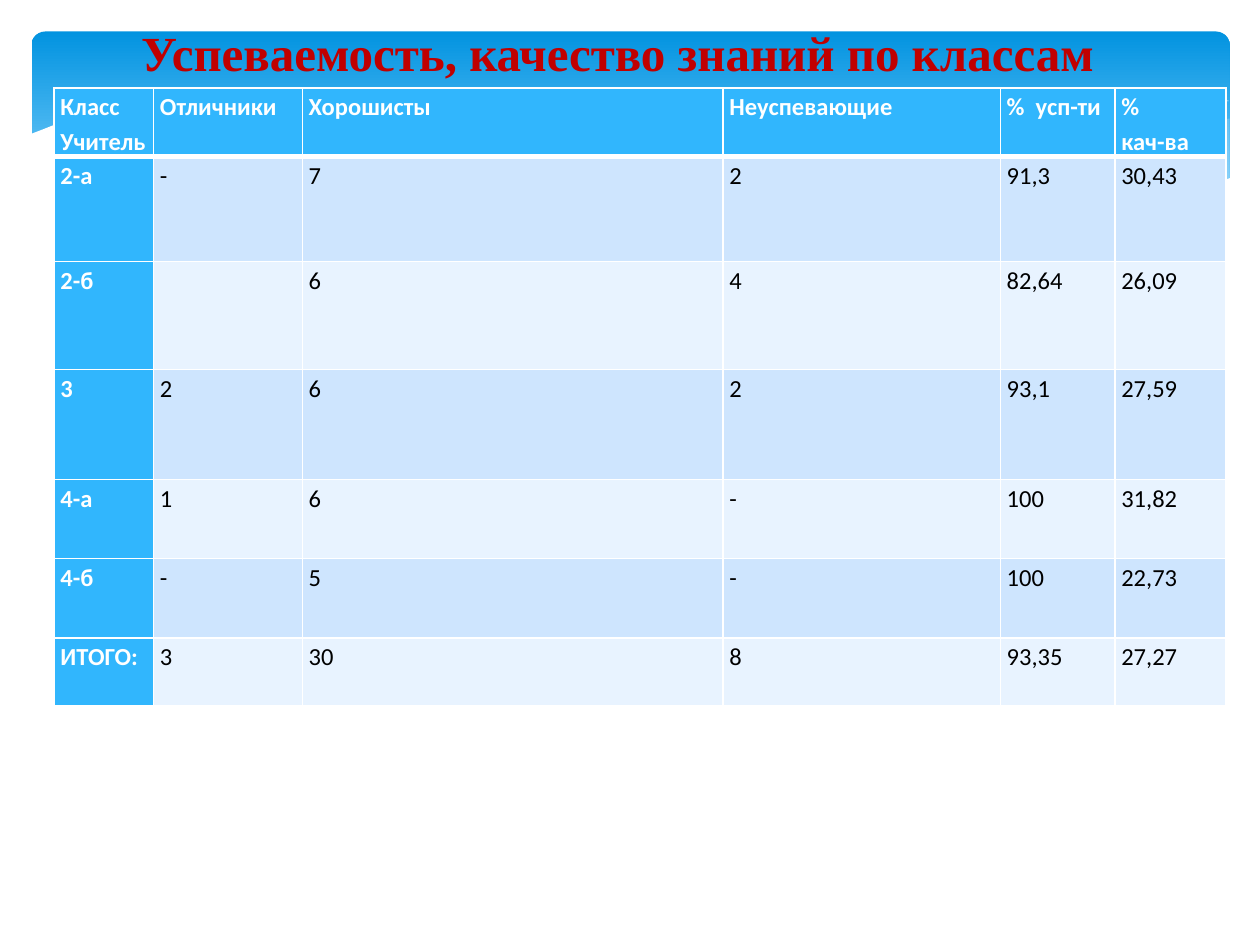
from dataclasses import dataclass
from lxml import etree
from pptx import Presentation
from pptx.dml.color import RGBColor
from pptx.enum.shapes import MSO_SHAPE
from pptx.enum.text import MSO_ANCHOR, MSO_AUTO_SIZE, PP_ALIGN
from pptx.oxml.ns import qn
from pptx.util import Inches, Pt

ROUNDED = MSO_SHAPE.ROUNDED_RECTANGLE
MIDDLE = MSO_ANCHOR.MIDDLE
NO_AUTOFIT = MSO_AUTO_SIZE.NONE
CENTER = PP_ALIGN.CENTER


@dataclass(frozen=True)
class Theme:
    white: str = "FFFFFF"
    black: str = "000000"
    title: str = "C00000"
    band_top: str = "0293E0"
    band_bottom: str = "83D3FE"
    wave: str = "C6E7FC"
    header: str = "31B6FD"
    odd_row: str = "CEE5FE"
    even_row: str = "E8F3FF"
    title_font: str = "Times New Roman"
    table_font: str = "Calibri"
    title_size: int = 28
    table_size: int = 14


theme = Theme()


def add_wave(slide, points, closed, color, opacity=100):
    start, *rest = [(Inches(x), Inches(y)) for x, y in points]
    builder = slide.shapes.build_freeform(*start)
    builder.add_line_segments(rest, close=closed)
    shape = builder.convert_to_shape()
    shape.shadow.inherit = False
    if not closed:
        shape.fill.background()
        shape.line.color.rgb = RGBColor.from_string(color)
        shape.line.width = Pt(0.25)
        return
    shape.line.fill.background()
    shape.fill.solid()
    shape.fill.fore_color.rgb = RGBColor.from_string(color)
    if opacity < 100:
        tone = shape.fill._xPr.find(qn("a:solidFill"))[0]
        etree.SubElement(tone, qn("a:alpha"), val=str(opacity * 1000))


def add_border(cell, side, width):
    properties = cell._tc.get_or_add_tcPr()
    line = etree.SubElement(properties, qn(f"a:ln{side}"), w=str(Pt(width)))
    fill = etree.SubElement(line, qn("a:solidFill"))
    etree.SubElement(fill, qn("a:srgbClr"), val=theme.white)


presentation = Presentation()
presentation.slide_width = Inches(10)
presentation.slide_height = Inches(7.5)
slide = presentation.slides.add_slide(presentation.slide_layouts[5])

band = slide.shapes.add_shape(ROUNDED, Inches(0.25), Inches(0.25), Inches(9.51), Inches(1.56))
band.adjustments[0] = 0.07
band.shadow.inherit = False
band.line.fill.background()
band.fill.gradient()
band.fill.gradient_angle = 270
band_stops = [(0, theme.band_top), (0.9, theme.band_bottom)]
for stop, (position, color) in zip(band.fill.gradient_stops, band_stops):
    stop.position = position
    stop.color.rgb = RGBColor.from_string(color)

right_wave = [
    (9.76, 0.94), (9.48, 0.99), (9.21, 1.04), (8.91, 1.1), (8.61, 1.18), (8.05, 1.31),
    (7.53, 1.43), (7.06, 1.52), (6.61, 1.6), (6.91, 1.64), (7.32, 1.68), (7.69, 1.71),
    (8.03, 1.72), (8.35, 1.72), (8.63, 1.7), (8.89, 1.66), (9.13, 1.62), (9.35, 1.56),
    (9.63, 1.47), (9.76, 1.41),
]
middle_wave = [
    (8.93, 1.67), (8.66, 1.64), (8.07, 1.54), (7.41, 1.42), (6.68, 1.26), (6.29, 1.16),
    (5.84, 1.06), (5.41, 0.97), (5.02, 0.9), (4.65, 0.86), (4.2, 0.82), (3.8, 0.8),
    (3.44, 0.8), (3.13, 0.82), (2.86, 0.86), (3.23, 0.9), (3.62, 0.97), (4.04, 1.06),
    (4.49, 1.16), (5.3, 1.35), (5.84, 1.46), (6.34, 1.56), (6.8, 1.63), (7.22, 1.68),
    (7.61, 1.71), (7.96, 1.73), (8.28, 1.73), (8.57, 1.71), (8.93, 1.67),
]
long_curve = [
    (3.09, 0.9), (3.28, 0.86), (3.53, 0.84), (3.87, 0.82), (4.16, 0.81), (4.5, 0.82),
    (4.89, 0.84), (5.33, 0.88), (5.82, 0.94), (6.36, 1.03), (6.95, 1.14), (7.6, 1.28),
    (8.31, 1.45), (9.07, 1.66),
]
short_curve = [
    (6.13, 1.51), (6.53, 1.41), (6.95, 1.3), (7.48, 1.17), (8.06, 1.04), (8.66, 0.93),
    (8.95, 0.88), (9.24, 0.84), (9.51, 0.82), (9.75, 0.8),
]
white_wave = [
    (9.77, 1.41), (9.59, 1.48), (9.4, 1.54), (9.2, 1.59), (8.99, 1.64), (8.75, 1.67),
    (8.5, 1.7), (8.23, 1.71), (7.93, 1.71), (7.61, 1.7), (7.26, 1.67), (6.88, 1.62),
    (6.48, 1.56), (6.03, 1.49), (5.55, 1.39), (5.03, 1.28), (4.47, 1.14), (3.91, 1.02),
    (3.4, 0.92), (2.92, 0.85), (2.5, 0.81), (2.11, 0.78), (1.77, 0.78), (1.46, 0.79),
    (1.19, 0.82), (0.95, 0.85), (0.76, 0.89), (0.59, 0.93), (0.46, 0.98), (0.36, 1.02),
    (0.23, 1.07), (0.23, 2.24), (9.77, 2.24),
]
add_wave(slide, right_wave, True, theme.wave, 29)
add_wave(slide, middle_wave, True, theme.wave, 40)
add_wave(slide, long_curve, False, theme.white)
add_wave(slide, short_curve, False, theme.white)
add_wave(slide, white_wave, True, theme.white)

title = slide.shapes.title
slide.shapes._spTree.append(title._element)
title.left, title.top = Inches(0.98), Inches(0.13)
title.width, title.height = Inches(7.84), Inches(0.57)
title.text = "Успеваемость, качество знаний по классам"
title.text_frame.word_wrap = False
title.text_frame.auto_size = NO_AUTOFIT
title.text_frame.vertical_anchor = MIDDLE
paragraph = title.text_frame.paragraphs[0]
paragraph.alignment = CENTER
paragraph.font.name = theme.title_font
paragraph.font.size = Pt(theme.title_size)
paragraph.font.bold = True
paragraph.font.color.rgb = RGBColor.from_string(theme.title)

rows = [
    ["Класс\nУчитель", "Отличники", "Хорошисты", "Неуспевающие", "%  усп-ти", "%\nкач-ва"],
    ["2-а", "-", "7", "2", "91,3", "30,43"],
    ["2-б", "", "6", "4", "82,64", "26,09"],
    ["3", "2", "6", "2", "93,1", "27,59"],
    ["4-а", "1", "6", "-", "100", "31,82"],
    ["4-б", "-", "5", "-", "100", "22,73"],
    ["ИТОГО:", "3", "30", "8", "93,35", "27,27"],
]
column_widths = [0.79, 1.18, 3.34, 2.2, 0.91, 0.88]
row_heights = [0.53, 0.83, 0.86, 0.87, 0.63, 0.63, 0.54]
table = slide.shapes.add_table(
    len(rows), len(column_widths), Inches(0.43), Inches(0.7),
    Inches(sum(column_widths)), Inches(sum(row_heights)),
).table
table.first_col = True
for column, width in zip(table.columns, column_widths):
    column.width = Inches(width)

for row_index, values in enumerate(rows):
    table.rows[row_index].height = Inches(row_heights[row_index])
    for column_index, value in enumerate(values):
        cell = table.cell(row_index, column_index)
        is_header = row_index == 0 or column_index == 0
        body_color = theme.odd_row if row_index % 2 else theme.even_row
        cell.text = value
        cell.margin_left = cell.margin_right = Inches(0.05)
        cell.margin_top = cell.margin_bottom = Inches(0)
        add_border(cell, "L", 1)
        add_border(cell, "R", 1)
        add_border(cell, "T", 3 if row_index == 1 else 1)
        add_border(cell, "B", 3 if row_index == 0 else 1)
        cell.fill.solid()
        cell.fill.fore_color.rgb = RGBColor.from_string(theme.header if is_header else body_color)
        for paragraph in cell.text_frame.paragraphs:
            paragraph.line_spacing = 1.15
            paragraph.font.name = theme.table_font
            paragraph.font.size = Pt(theme.table_size)
            paragraph.font.bold = is_header
            paragraph.font.color.rgb = RGBColor.from_string(theme.white if is_header else theme.black)

presentation.save("out.pptx")
